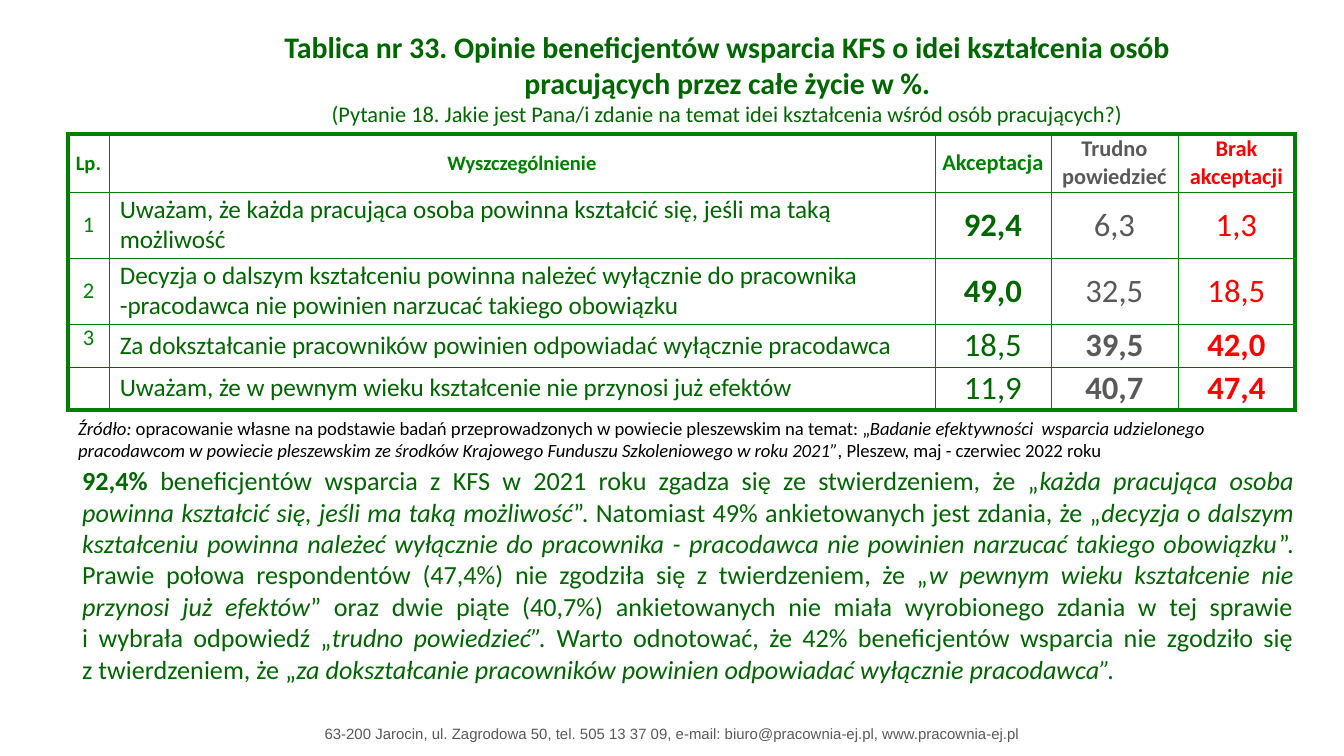
from lxml import etree
from pptx import Presentation
from pptx.dml.color import RGBColor
from pptx.enum.text import MSO_ANCHOR, PP_ALIGN
from pptx.oxml.ns import qn
from pptx.util import Emu, Pt

LEFT, CENTER, JUSTIFY = PP_ALIGN.LEFT, PP_ALIGN.CENTER, PP_ALIGN.JUSTIFY
TOP, MIDDLE = MSO_ANCHOR.TOP, MSO_ANCHOR.MIDDLE

GREEN = RGBColor(0x00, 0x80, 0x00)
DARK_GREEN = RGBColor(0x00, 0x66, 0x00)
GREY = RGBColor(0x59, 0x59, 0x59)
RED = RGBColor(0xFF, 0x00, 0x00)
BLACK = RGBColor(0x00, 0x00, 0x00)

PAGE_WIDTH, PAGE_HEIGHT = 1344, 756
THICK, THIN = 2.25, 0.25

COLUMNS = [41, 826, 116, 127, 117]
ROWS = [58, 66, 66, 43, 43]
HEADERS = [("Lp.", 11, GREEN), ("Wyszczególnienie", 11, GREEN), ("Akceptacja", 12, GREEN),
           ("Trudno powiedzieć", 12, GREY), ("Brak akceptacji", 12, RED)]
VALUE_COLORS = [DARK_GREEN, GREY, RED]
# Number, its anchor, statement, values, columns of the values in bold
OPINIONS = [
    ("1", MIDDLE, "Uważam, że każda pracująca osoba powinna kształcić się, jeśli ma taką możliwość",
     ["92,4", "6,3", "1,3"], [0]),
    ("2", MIDDLE, "Decyzja o dalszym kształceniu powinna należeć wyłącznie do pracownika "
     "-pracodawca nie powinien narzucać takiego obowiązku",
     ["49,0", "32,5", "18,5"], [0]),
    ("3", TOP, "Za dokształcanie pracowników powinien odpowiadać wyłącznie pracodawca",
     ["18,5", "39,5", "42,0"], [1, 2]),
    ("", TOP, "Uważam, że w pewnym wieku kształcenie nie przynosi już efektów",
     ["11,9", "40,7", "47,4"], [1, 2]),
]

# Plain and italic spans alternate in the source note and the commentary
SOURCE = [
    "", "Źródło: ",
    "opracowanie własne na podstawie badań przeprowadzonych w powiecie pleszewskim na temat: „",
    "Badanie efektywności  wsparcia udzielonego pracodawcom w powiecie pleszewskim "
    "ze środków Krajowego Funduszu Szkoleniowego w roku 2021”",
    ", Pleszew, maj - czerwiec 2022 roku",
]
COMMENTARY = [
    "beneficjentów wsparcia z KFS w 2021 roku zgadza się ze stwierdzeniem, że „",
    "każda pracująca osoba powinna kształcić się, jeśli ma taką możliwość",
    "”. Natomiast 49% ankietowanych jest zdania, że „",
    "decyzja o dalszym kształceniu powinna należeć wyłącznie do pracownika - "
    "pracodawca nie powinien narzucać takiego obowiązku",
    "”. Prawie połowa respondentów (47,4%) nie zgodziła się z twierdzeniem, że „",
    "w pewnym wieku kształcenie nie przynosi już efektów",
    "” oraz dwie piąte (40,7%) ankietowanych nie miała wyrobionego zdania w tej sprawie\n"
    "i wybrała odpowiedź „",
    "trudno powiedzieć”. ",
    "Warto odnotować, że 42% beneficjentów wsparcia nie zgodziło się\nz twierdzeniem, że „",
    "za dokształcanie pracowników powinien odpowiadać wyłącznie pracodawca”.",
]


def px(length):
    return Emu(round(length * 9144000 / PAGE_WIDTH))


def add_span(para, text, size, color, bold=False, italic=False, font="Calibri"):
    for index, line in enumerate(text.split("\n")):
        if index:
            para.add_line_break()
        span = para.add_run()
        span.text = line
        span.font.name = font
        span.font.size = Pt(size)
        span.font.bold = bold
        span.font.italic = italic
        span.font.color.rgb = color


def add_alternating_spans(para, texts, size, color):
    for index, text in enumerate(texts):
        if text:
            add_span(para, text, size, color, italic=index % 2 == 1)


def add_frame(page, left, top, width, height, align):
    box = page.shapes.add_textbox(px(left), px(top), px(width), px(height))
    frame = box.text_frame
    frame.word_wrap = True
    frame.paragraphs[0].alignment = align
    return frame


def set_border(cell, side, color, width):
    properties = cell._tc.get_or_add_tcPr()
    line = etree.SubElement(properties, qn("a:ln" + side), w=str(Pt(width)))
    fill = etree.SubElement(line, qn("a:solidFill"))
    etree.SubElement(fill, qn("a:srgbClr"), val=str(color))


def format_cell(cell, margin, anchor, align):
    cell.margin_left = cell.margin_right = px(margin)
    cell.margin_top = cell.margin_bottom = 0
    cell.vertical_anchor = anchor
    para = cell.text_frame.paragraphs[0]
    para.alignment = align
    return para


def add_title(page, left, top, width, height):
    frame = add_frame(page, left, top, width, height, CENTER)
    add_span(frame.paragraphs[0],
             "Tablica nr 33. Opinie beneficjentów wsparcia KFS o idei kształcenia osób\n"
             "pracujących przez całe życie w %.", 16, DARK_GREEN, bold=True)
    question = frame.add_paragraph()
    question.alignment = CENTER
    add_span(question, "(Pytanie 18. Jakie jest Pana/i zdanie na temat idei kształcenia "
             "wśród osób pracujących?)", 12, DARK_GREEN)


def add_opinion_table(page, left, top):
    table = page.shapes.add_table(len(ROWS), len(COLUMNS), px(left), px(top),
                                  px(sum(COLUMNS)), px(sum(ROWS))).table
    table.first_row = table.horz_banding = False
    for column, width in zip(table.columns, COLUMNS):
        column.width = px(width)
    for row, height in zip(table.rows, ROWS):
        row.height = px(height)

    # Thick frame, thin inner lines, darker line above the last row
    last_row, last_column = len(ROWS) - 1, len(COLUMNS) - 1
    for r in range(len(ROWS)):
        for c in range(len(COLUMNS)):
            cell = table.cell(r, c)
            set_border(cell, "L", GREEN, THICK if c == 0 else THIN)
            set_border(cell, "R", GREEN, THICK if c == last_column else THIN)
            set_border(cell, "T", DARK_GREEN if r == last_row else GREEN,
                       THICK if r == 0 else THIN)
            set_border(cell, "B", DARK_GREEN if r == last_row - 1 else GREEN,
                       THICK if r == last_row else THIN)
            cell.fill.background()

    # Header row
    for c, (text, size, color) in enumerate(HEADERS):
        add_span(format_cell(table.cell(0, c), 7, MIDDLE, CENTER), text, size, color, bold=True)

    # Opinions
    for r, (number, anchor, statement, values, bold_columns) in enumerate(OPINIONS, 1):
        number_para = format_cell(table.cell(r, 0), 7, anchor, CENTER)
        if number:
            add_span(number_para, number, 12, GREEN)
        add_span(format_cell(table.cell(r, 1), 11, MIDDLE, LEFT), statement, 13.5, DARK_GREEN)
        for c, (value, color) in enumerate(zip(values, VALUE_COLORS)):
            para = format_cell(table.cell(r, c + 2), 1, MIDDLE, CENTER)
            add_span(para, value, 17.5, color, bold=c in bold_columns)


def add_source(page, left, top, width, height):
    frame = add_frame(page, left, top, width, height, LEFT)
    add_alternating_spans(frame.paragraphs[0], SOURCE, 10, BLACK)


def add_commentary(page, left, top, width, height):
    para = add_frame(page, left, top, width, height, JUSTIFY).paragraphs[0]
    add_span(para, "92,4% ", 14, DARK_GREEN, bold=True)
    add_alternating_spans(para, COMMENTARY, 14, DARK_GREEN)


def add_footer(page, left, top, width, height):
    frame = add_frame(page, left, top, width, height, CENTER)
    add_span(frame.paragraphs[0],
             "63-200 Jarocin, ul. Zagrodowa 50, tel. 505 13 37 09, "
             "e-mail: biuro@pracownia-ej.pl, www.pracownia-ej.pl", 8, GREY, font="Arial")


def main():
    deck = Presentation()
    deck.slide_width, deck.slide_height = px(PAGE_WIDTH), px(PAGE_HEIGHT)
    page = deck.slides.add_slide(deck.slide_layouts[6])
    add_footer(page, 81, 718, 1183, 32)
    add_opinion_table(page, 68, 134)
    add_title(page, 151, 22, 1153, 113)
    add_source(page, 65, 410, 1183, 59)
    add_commentary(page, 69, 458, 1238, 235)
    deck.save("out.pptx")


if __name__ == "__main__":
    main()
